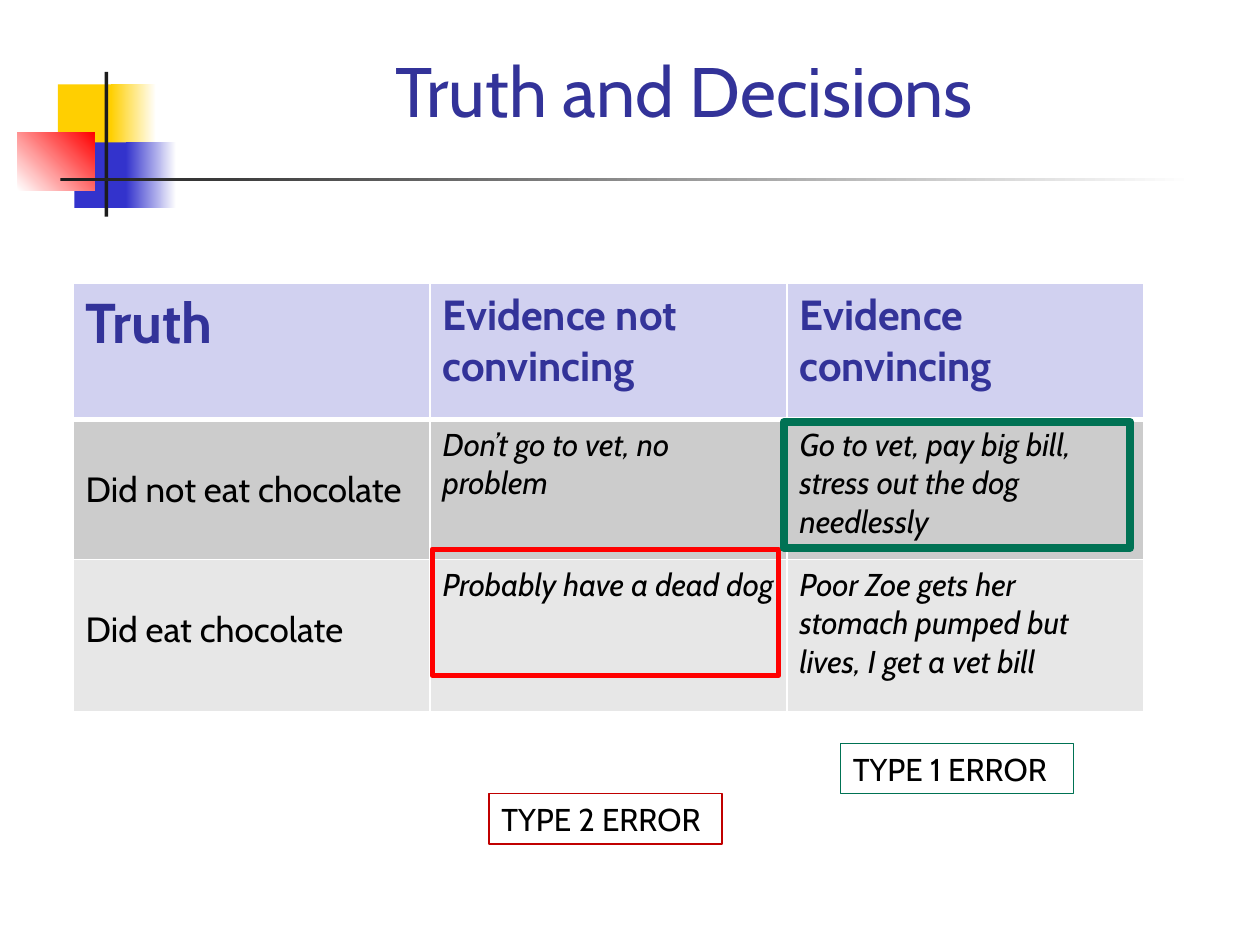
from lxml.etree import SubElement
from pptx import Presentation
from pptx.dml.color import RGBColor
from pptx.enum.shapes import MSO_SHAPE as SHAPE
from pptx.enum.text import MSO_ANCHOR as ANCHOR, MSO_AUTO_SIZE as AUTO, PP_ALIGN as ALIGN
from pptx.oxml.ns import qn
from pptx.util import Inches, Pt

FONT = "Cabin"
NAVY, BLACK, WHITE = "333399", "000000", "FFFFFF"
GREEN, RED, DARK_RED = "007254", "FF0000", "C00000"

TITLE = "Truth and Decisions"
ORNAMENT = [
    ((0.46, 0.67, 0.48, 0.52), ("FFCF01",), 0),
    ((0.88, 0.67, 0.36, 0.52), ("FFCF01", WHITE), 0),
    ((0.59, 1.13, 0.46, 0.52), ("3333CC",), 0),
    ((1, 1.13, 0.4, 0.52), ("3333CC", WHITE), 0),
    ((0.14, 1.05, 0.61, 0.46), (WHITE, RED), 45),
    ((0.83, 0.57, 0.03, 1.15), ("1C1C1C",), 0),
    ((0.48, 1.41, 9, 0.03), ("1C1C1C", WHITE), 0),
]
ROWS = [
    ("Truth", "Evidence not convincing", "Evidence convincing"),
    ("Did not eat chocolate", "Don’t go to vet, no problem",
     "Go to vet, pay big bill, stress out the dog needlessly"),
    ("Did eat chocolate", "Probably have a dead dog",
     "Poor Zoe gets her stomach pumped but lives, I get a vet bill"),
]
ROW_HEIGHTS = (1.08, 1.11, 1.21)
ROW_FILLS = ("D1D1F0", "CCCCCC", "E7E7E7")
HEADER_LABEL = dict(size=32, color=NAVY, bold=True)
HEADER = dict(size=24, color=NAVY, bold=True)
ROW_LABEL = dict(size=20, spacing=2)
OUTCOME = dict(size=18, italic=True)
FRAMES = [
    ((3.43, 4.36, 2.75, 1), RED, 3, None),
    ((6.22, 3.35, 2.75, 1), GREEN, 4.5, None),
    ((6.67, 5.9, 1.85, 0.4), GREEN, 0.75, "TYPE 1 ERROR"),
    ((3.88, 6.3, 1.85, 0.4), DARK_RED, 0.75, "TYPE 2 ERROR"),
]


def rgb(color):
    """Turn a hex string into a colour."""
    return RGBColor.from_string(color)


def write(tf, text, size=18, color=BLACK, bold=False, italic=False,
          align=ALIGN.LEFT, spacing=None):
    """Put one formatted paragraph into a text frame."""
    p = tf.paragraphs[0]
    p.alignment = align
    if spacing:
        p.line_spacing = spacing
    r = p.add_run()
    r.text = text
    r.font.name, r.font.size = FONT, Pt(size)
    r.font.bold, r.font.italic = bold, italic
    r.font.color.rgb = rgb(color)


def add_rect(s, box):
    """Add a plain rectangle without a shadow."""
    sp = s.shapes.add_shape(SHAPE.RECTANGLE, *map(Inches, box))
    sp.shadow.inherit = False
    return sp


def add_block(s, box, colors, angle):
    """Add a rectangle with a solid or gradient fill."""
    sp = add_rect(s, box)
    sp.line.fill.background()
    if len(colors) == 1:
        sp.fill.solid()
        sp.fill.fore_color.rgb = rgb(colors[0])
        return
    sp.fill.gradient()
    sp.fill.gradient_angle = angle
    for stop, color in zip(sp.fill.gradient_stops, colors):
        stop.color.rgb = rgb(color)


def add_frame(s, box, color, width, text):
    """Add an unfilled outline, with a label if given."""
    sp = add_rect(s, box)
    sp.fill.background()
    sp.line.color.rgb = rgb(color)
    sp.line.width = Pt(width)
    if text:
        tf = sp.text_frame
        tf.word_wrap = False
        tf.auto_size = AUTO.SHAPE_TO_FIT_TEXT
        tf.vertical_anchor = ANCHOR.TOP
        write(tf, text)


def set_borders(cell, widths):
    """Draw white borders on a cell, keyed by side."""
    tcPr = cell._tc.get_or_add_tcPr()
    for i, (side, width) in enumerate(widths.items()):
        ln = SubElement(tcPr, qn(f"a:ln{side}"), w=str(Pt(width)))
        fill = SubElement(ln, qn("a:solidFill"))
        SubElement(fill, qn("a:srgbClr"), val=WHITE)
        tcPr.insert(i, ln)


def add_decisions(s):
    """Add the table of truth against evidence."""
    box = map(Inches, (0.58, 2.25, 8.5, sum(ROW_HEIGHTS)))
    table = s.shapes.add_table(len(ROWS), len(ROWS[0]), *box).table
    for i, (texts, height, fill) in enumerate(zip(ROWS, ROW_HEIGHTS, ROW_FILLS)):
        table.rows[i].height = Inches(height)
        label, body = (ROW_LABEL, OUTCOME) if i else (HEADER_LABEL, HEADER)
        for j, text in enumerate(texts):
            cell = table.cell(i, j)
            cell.fill.solid()
            cell.fill.fore_color.rgb = rgb(fill)
            set_borders(cell, {"L": 1, "R": 1, "T": 3 if i == 1 else 1,
                               "B": 1 if i else 3})
            write(cell.text_frame, text, **(body if j else label))


def main():
    """Build the slide and save it."""
    prs = Presentation()
    prs.slide_width, prs.slide_height = Inches(10), Inches(7.5)
    s = prs.slides.add_slide(prs.slide_layouts[6])
    for block in ORNAMENT:
        add_block(s, *block)
    tf = s.shapes.add_textbox(*map(Inches, (1.17, 0.17, 8.52, 0.92))).text_frame
    tf.word_wrap = True
    tf.vertical_anchor = ANCHOR.BOTTOM
    write(tf, TITLE, size=40, color=NAVY, align=ALIGN.CENTER)
    add_decisions(s)
    for frame in FRAMES:
        add_frame(s, *frame)
    prs.save("out.pptx")


if __name__ == "__main__":
    main()
